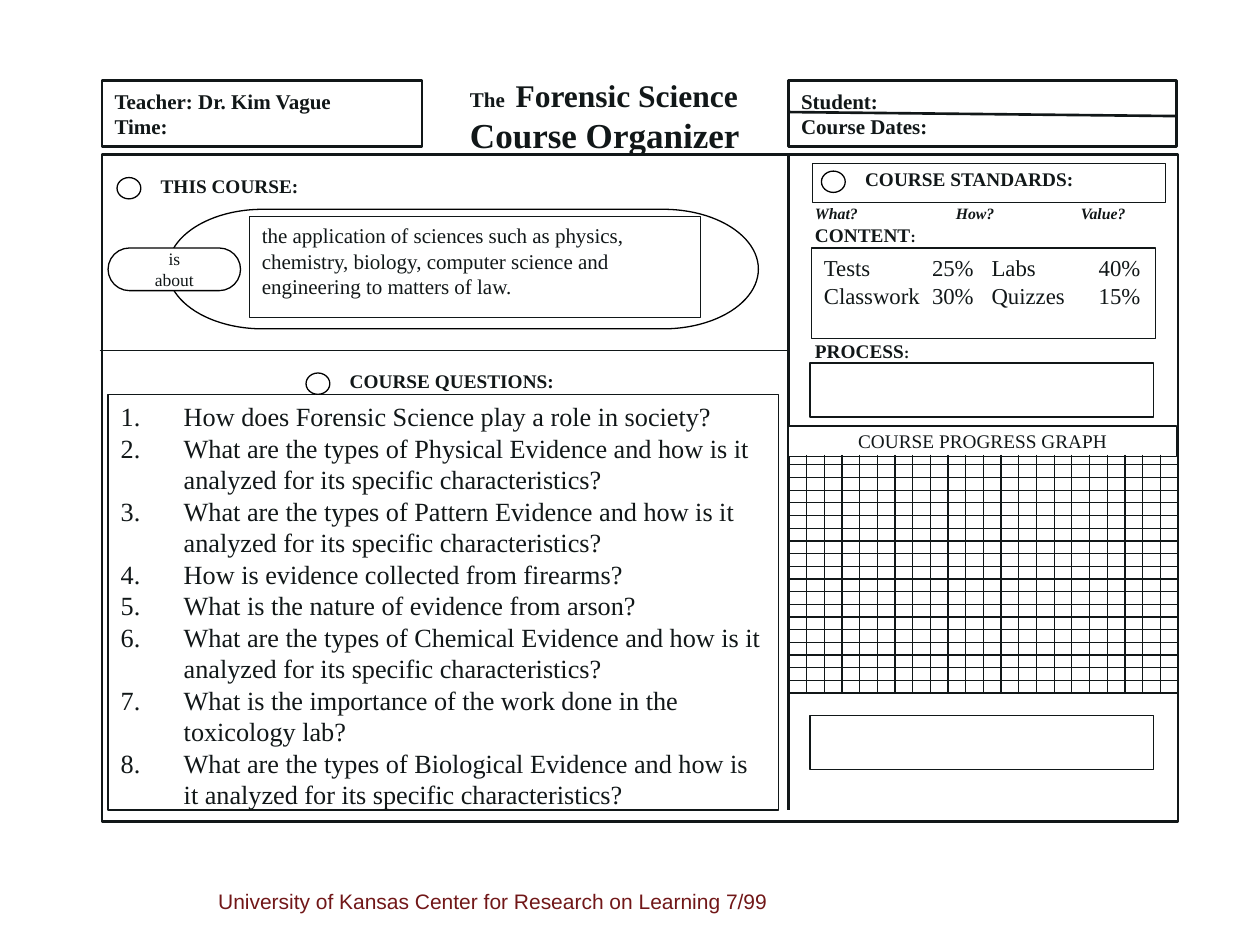
from pptx import Presentation
from pptx.dml.color import RGBColor
from pptx.enum.shapes import MSO_CONNECTOR, MSO_SHAPE
from pptx.enum.text import MSO_ANCHOR, MSO_AUTO_SIZE, PP_ALIGN
from pptx.oxml.ns import qn
from pptx.util import Cm, Pt
from lxml.etree import SubElement

COLORS = {"ink": "111718", "black": "000000", "paper": "FFFFFF", "credit": "711718"}
QUESTIONS = [
    "How does Forensic Science play a role in society?",
    "What are the types of Physical Evidence and how is it analyzed for its specific characteristics?",
    "What are the types of Pattern Evidence and how is it analyzed for its specific characteristics?",
    "How is evidence collected from firearms?",
    "What is the nature of evidence from arson?",
    "What are the types of Chemical Evidence and how is it analyzed for its specific characteristics?",
    "What is the importance of the work done in the toxicology lab?",
    "What are the types of Biological Evidence and how is it analyzed for its specific characteristics?",
]


class Organizer:
    """Holds the style and the current slide; lengths are in centimetres."""

    font = "Times New Roman"

    def __init__(self, presentation):
        self.slide = presentation.slides.add_slide(presentation.slide_layouts[1])

    def color(self, name):
        return RGBColor.from_string(COLORS[name])

    def place(self, shape, left, top, width, height):
        shape.left, shape.top = Cm(left), Cm(top)
        shape.width, shape.height = Cm(width), Cm(height)

    def outline(self, shape, color, weight):
        shape.line.color.rgb = self.color(color)
        shape.line.width = Pt(weight)

    def box(self, area, kind=MSO_SHAPE.RECTANGLE, color="ink", weight=0.75, filled=True):
        shape = self.slide.shapes.add_shape(kind, *map(Cm, area))
        shape.shadow.inherit = False
        if filled:
            shape.fill.solid()
            shape.fill.fore_color.rgb = self.color("paper")
        else:
            shape.fill.background()
        self.outline(shape, color, weight)
        return shape

    def line(self, start, end, weight=0.75):
        connector = self.slide.shapes.add_connector(
            MSO_CONNECTOR.STRAIGHT, *map(Cm, start + end))
        self.outline(connector, "ink", weight)
        SubElement(connector._element.spPr, qn("a:effectLst"))

    def fill_text(self, shape, paragraphs, align=PP_ALIGN.LEFT, anchor=MSO_ANCHOR.TOP,
                  color="ink", font=None, tabs=(), numbered=False):
        """Each paragraph is a list of runs: (text, size, style letters)."""
        frame = shape.text_frame
        frame.word_wrap = True
        frame.auto_size = MSO_AUTO_SIZE.NONE
        frame.vertical_anchor = anchor
        for index, runs in enumerate(paragraphs):
            paragraph = frame.add_paragraph() if index else frame.paragraphs[0]
            paragraph.alignment = align
            paragraph.space_before = Pt(0)
            properties = paragraph._p.get_or_add_pPr()
            if numbered:
                properties.set("marL", str(Cm(1.27)))
                properties.set("indent", str(Cm(-1.27)))
                SubElement(properties, qn("a:buFont"), typeface=self.font)
                SubElement(properties, qn("a:buAutoNum"), type="arabicPeriod")
            if tabs:
                stops = SubElement(properties, qn("a:tabLst"))
                for stop in tabs:
                    SubElement(stops, qn("a:tab"), pos=str(Cm(stop)), algn="l")
            for text, size, style in runs:
                run = paragraph.add_run()
                run.text = text
                run.font.name = font or self.font
                run.font.size = Pt(size)
                run.font.bold = "b" in style
                run.font.italic = "i" in style
                run.font.color.rgb = self.color(color)

    def label(self, area, paragraphs, **options):
        self.fill_text(self.slide.shapes.add_textbox(*map(Cm, area)), paragraphs, **options)

    def heading(self, left, top, width, text):
        self.box((left, top, 0.48, 0.43), MSO_SHAPE.OVAL, "black")
        self.label((left + 0.63, top - 0.2, width, 0.84), [[(text, 11, "b")]])

    def grid(self, left, top, right, bottom, first_column, last_column, columns,
             first_row, rows):
        for index in range(columns):
            x = first_column + (last_column - first_column) * index / (columns - 1)
            self.line((x, top), (x, bottom))
        for index in range(rows):
            y = first_row + (bottom - first_row) * index / (rows - 1)
            self.line((left, y), (right, y))


def main():
    presentation = Presentation()
    presentation.slide_width, presentation.slide_height = Cm(25.4), Cm(19.05)
    organizer = Organizer(presentation)
    title, questions = organizer.slide.placeholders

    # Title and header boxes
    organizer.place(title, 9.22, 1.4, 7.37, 1.68)
    organizer.fill_text(title, [[("The\t", 12, "b"), ("Forensic Science", 18, "b")],
                                [("Course Organizer", 20, "b")]], tabs=[0.92])
    for area, lines in [((2.06, 1.63, 6.45, 1.32), ["Teacher: Dr. Kim Vague", "Time:"]),
                        ((15.9, 1.63, 7.82, 1.32), ["Student:", "Course Dates:"])]:
        header = organizer.box(area, weight=1.5)
        organizer.fill_text(header, [[(text, 12, "b")] for text in lines],
                            anchor=MSO_ANCHOR.MIDDLE)
    organizer.line((15.93, 2.26), (23.72, 2.34), 1.5)

    # Frame and dividers
    organizer.box((2.06, 3.12, 21.69, 13.44), weight=1.5, filled=False)
    organizer.line((15.9, 3.12), (15.9, 16.33), 1.5)
    organizer.line((2.01, 7.06), (15.88, 7.06))

    # This course
    organizer.heading(2.36, 3.58, 4.09, "THIS COURSE:")
    organizer.box((3.38, 4.22, 11.91, 2.41), MSO_SHAPE.FLOWCHART_TERMINATOR, "black")
    about = organizer.box((2.18, 5, 2.67, 0.86), MSO_SHAPE.FLOWCHART_TERMINATOR, "black")
    organizer.fill_text(about, [[("is", 10, "")], [("about", 10, "")]],
                        align=PP_ALIGN.CENTER, anchor=MSO_ANCHOR.MIDDLE)
    summary = organizer.box((5.03, 4.37, 9.09, 2.03))
    organizer.fill_text(summary, [[("the application of sciences such as physics, chemistry, "
                                    "biology, computer science and engineering to matters "
                                    "of law.", 12, "")]])

    # Course questions
    organizer.heading(6.17, 7.52, 6.05, "COURSE QUESTIONS:")
    organizer.place(questions, 2.18, 7.95, 13.51, 8.38)
    organizer.outline(questions, "ink", 0.75)
    organizer.fill_text(questions, [[(text, 15, "")] for text in QUESTIONS], numbered=True)

    # Course standards
    organizer.box((16.38, 3.3, 7.11, 0.79), filled=False)
    organizer.heading(16.56, 3.45, 6.15, "COURSE STANDARDS:")
    for left, text in [(16.18, "What?"), (19.02, "How?"), (21.54, "Value?")]:
        organizer.label((left, 3.99, 1.9, 0.6), [[(text, 9, "bi")]])
    for top, text in [(4.38, "CONTENT"), (6.71, "PROCESS")]:
        organizer.label((16.18, top, 2.84, 0.84), [[(text, 11, "b"), (":", 9, "b")]])
    content = organizer.box((16.36, 5, 6.93, 1.83))
    organizer.fill_text(content, [[("Tests\t25%\tLabs\t40%", 13, "")],
                                  [("Classwork\t30%\tQuizzes\t15%", 13, "")]],
                        tabs=[2.18, 3.38, 5.54])
    for top in (7.32, 14.43):
        organizer.box((16.33, top, 6.93, 1.09))

    # Course progress graph
    graph_title = organizer.box((15.9, 8.59, 7.82, 0.61))
    organizer.fill_text(graph_title, [[("COURSE PROGRESS GRAPH", 11, "")]],
                        align=PP_ALIGN.CENTER, anchor=MSO_ANCHOR.MIDDLE)
    organizer.grid(15.9, 9.17, 23.72, 13.97, first_column=16.26, last_column=23.39,
                   columns=21, first_row=9.37, rows=19)

    # Credit
    organizer.label((4.01, 17.78, 11.86, 0.84),
                    [[("University of Kansas Center for Research on Learning 7/99", 12, "")]],
                    align=PP_ALIGN.CENTER, color="credit", font="Arial")
    presentation.save("out.pptx")


if __name__ == "__main__":
    main()
